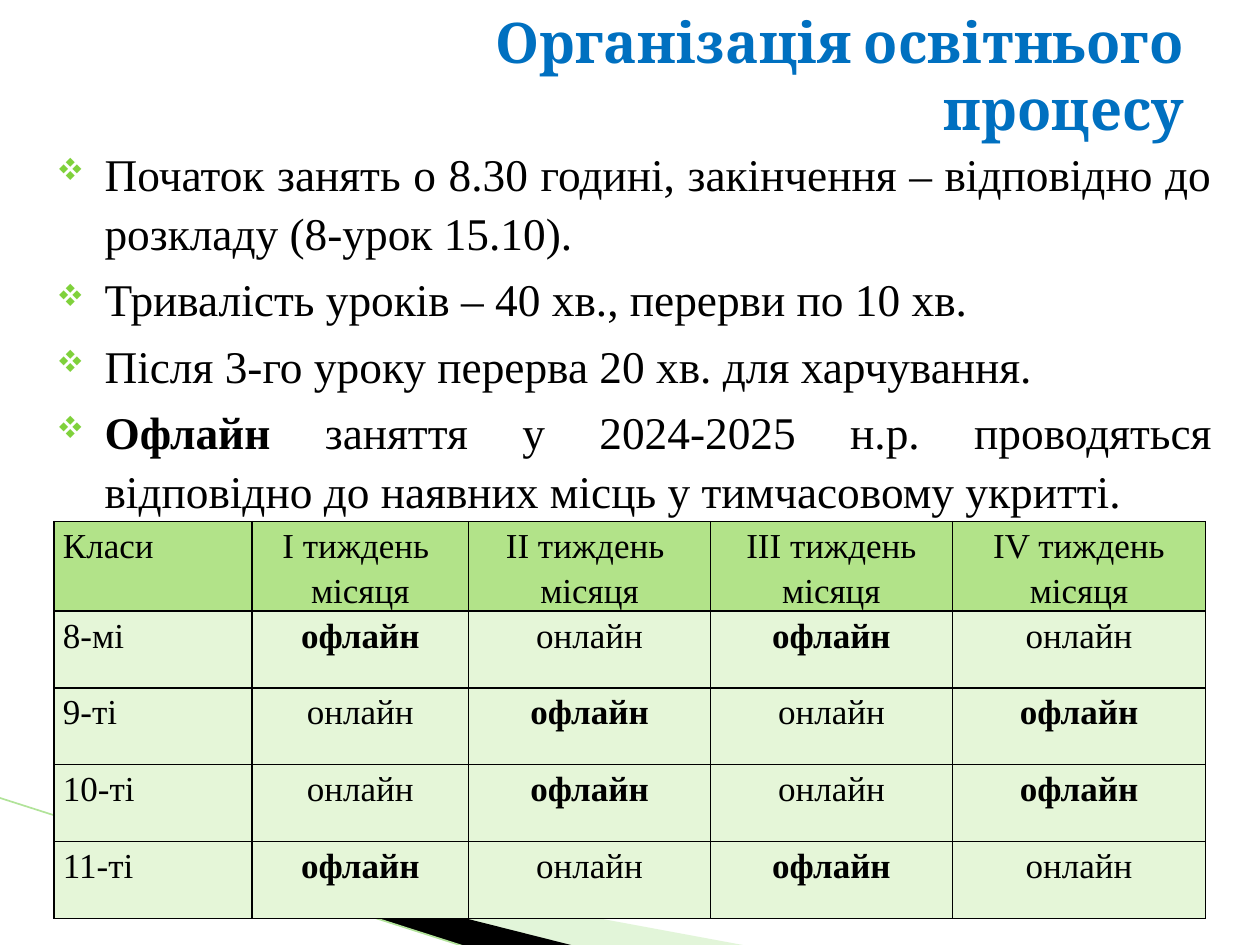
import pptx
import pptx.util
import pptx.dml.color
import pptx.enum.shapes
import pptx.enum.text
import pptx.oxml
import pptx.oxml.ns
from lxml import etree

Inches, Pt = pptx.util.Inches, pptx.util.Pt
RGB = pptx.dml.color.RGBColor.from_string
ALIGN = pptx.enum.text.PP_ALIGN
qn = pptx.oxml.ns.qn

COLORS = {"text": "000000", "title": "0070C0", "bullet": "7FD13B",
          "head": "B2E389", "row": "E5F6D8", "pale": "B8E7A1",
          "edge": "B1E399", "border": "000000"}
SERIF = "Times New Roman"


def set_font(font, color, **values):
    for attribute, value in values.items():
        setattr(font, attribute, value)
    font.color.rgb = RGB(COLORS[color])


def add_element(parent, tag, **attributes):
    return etree.SubElement(parent, qn(tag), attributes)


deck = pptx.Presentation()
deck.slide_width, deck.slide_height = Inches(10), Inches(7.5)
slide = deck.slides.add_slide(deck.slide_layouts[1])

# Corner decoration
wedges = [
    ("pale", [(0.55, 6.51), (5.95, 7.51), (4.56, 7.51), (0.55, 6.5)]),
    ("text", [(0.53, 6.49), (4.57, 7.51), (3.72, 7.52), (0.54, 6.5)]),
]
for color, points in wedges:
    corners = [(Inches(x), Inches(y)) for x, y in points]
    builder = slide.shapes.build_freeform(*corners[0], scale=1.0)
    builder.add_line_segments(corners[1:], close=True)
    wedge = builder.convert_to_shape()
    wedge.shadow.inherit = False
    wedge.fill.solid()
    wedge.fill.fore_color.rgb = RGB(COLORS[color])
    wedge.line.fill.background()
    if color == "pale":
        tint = wedge.fill._xPr.find(qn("a:solidFill"))[0]
        add_element(tint, "a:alpha", val="40000")

edge = slide.shapes.add_connector(
    pptx.enum.shapes.MSO_CONNECTOR.STRAIGHT,
    Inches(-0.01), Inches(6.33), Inches(3.71), Inches(7.52))
edge.line.color.rgb = RGB(COLORS["edge"])
edge.line.width = Pt(0.95)
add_element(edge._element.spPr, "a:effectLst")

# Title
title = slide.shapes.title
title.left, title.top = Inches(2.87), Inches(0.3)
title.width, title.height = Inches(6.63), Inches(0.59)
heading = title.text_frame
heading.text = "Організація освітнього процесу"
heading.word_wrap = True
heading.auto_size = pptx.enum.text.MSO_AUTO_SIZE.NONE
heading.vertical_anchor = pptx.enum.text.MSO_ANCHOR.MIDDLE
heading.paragraphs[0].alignment = ALIGN.RIGHT
set_font(heading.paragraphs[0].runs[0].font, "title",
         name="Cambria", size=Pt(32), bold=True)

# Rules of the school day: (bold opening, rest)
rules = [
    ("", "Початок занять о 8.30 годині, закінчення – відповідно до розкладу (8-урок 15.10)."),
    ("", "Тривалість уроків – 40 хв., перерви по 10 хв."),
    ("", "Після 3-го уроку перерва 20 хв. для харчування."),
    ("Офлайн", " заняття у 2024-2025 н.р. проводяться відповідно до наявних місць "
               "у тимчасовому укритті."),
]
body = slide.placeholders[1]
body.left, body.top = Inches(0.35), Inches(1.07)
body.width, body.height = Inches(9.37), Inches(3.07)
body.text_frame.word_wrap = True
body.text_frame.auto_size = pptx.enum.text.MSO_AUTO_SIZE.NONE
for index, parts in enumerate(rules):
    rule = body.text_frame.paragraphs[0] if index == 0 else body.text_frame.add_paragraph()
    rule.alignment = ALIGN.JUSTIFY
    rule.line_spacing = 1.09
    rule.space_before = Pt(4 if index else 0)
    properties = rule._p.get_or_add_pPr()
    properties.set("marL", str(Inches(0.38)))
    properties.set("indent", str(Inches(-0.38)))
    bullet_color = add_element(properties, "a:buClr")
    add_element(bullet_color, "a:srgbClr", val=COLORS["bullet"])
    add_element(properties, "a:buSzPct", val="68000")
    add_element(properties, "a:buFont", typeface="Wingdings")
    add_element(properties, "a:buChar", char="v")
    for position, words in enumerate(parts):
        if words:
            run = rule.add_run()
            run.text = words
            set_font(run.font, "text", name=SERIF, size=Pt(25.9), bold=position == 0)

# Timetable: classes alternate between two monthly patterns
odd_weeks = ["офлайн", "онлайн"] * 2
even_weeks = ["онлайн", "офлайн"] * 2
timetable = [
    ["Класи", "І тиждень \nмісяця", "ІІ тиждень \nмісяця",
     "ІІІ тиждень місяця", "ІV тиждень місяця"],
    ["8-мі"] + odd_weeks,
    ["9-ті"] + even_weeks,
    ["10-ті"] + even_weeks,
    ["11-ті"] + odd_weeks,
]
column_widths = [1.57, 1.72, 1.92, 1.92, 2.01]
row_heights = [0.63] + [0.61] * 4
table = slide.shapes.add_table(
    len(row_heights), len(column_widths), Inches(0.43), Inches(4.14),
    Inches(sum(column_widths)), Inches(sum(row_heights))).table
for column, width in zip(table.columns, column_widths):
    column.width = Inches(width)
for row, height in zip(table.rows, row_heights):
    row.height = Inches(height)

cell_format = {"margin_left": Inches(0.07), "margin_right": Inches(0.07),
               "margin_top": 0, "margin_bottom": 0}
for r, entries in enumerate(timetable):
    for c, entry in enumerate(entries):
        cell = table.cell(r, c)
        for attribute, value in cell_format.items():
            setattr(cell, attribute, value)
        cell.text = entry
        for paragraph in cell.text_frame.paragraphs:
            paragraph.alignment = ALIGN.CENTER if c else ALIGN.LEFT
            paragraph.line_spacing = 1.15
            set_font(paragraph.runs[0].font, "text", name=SERIF, size=Pt(20),
                     bold=entry == "офлайн")
        # Borders come before the fill in the cell properties
        cell_properties = cell._tc.get_or_add_tcPr()
        for side in ("a:lnL", "a:lnR", "a:lnT", "a:lnB"):
            border = add_element(cell_properties, side, w=str(Pt(1)))
            border_fill = add_element(border, "a:solidFill")
            add_element(border_fill, "a:srgbClr", val=COLORS["border"])
        cell.fill.solid()
        cell.fill.fore_color.rgb = RGB(COLORS["row" if r else "head"])

deck.save("out.pptx")
